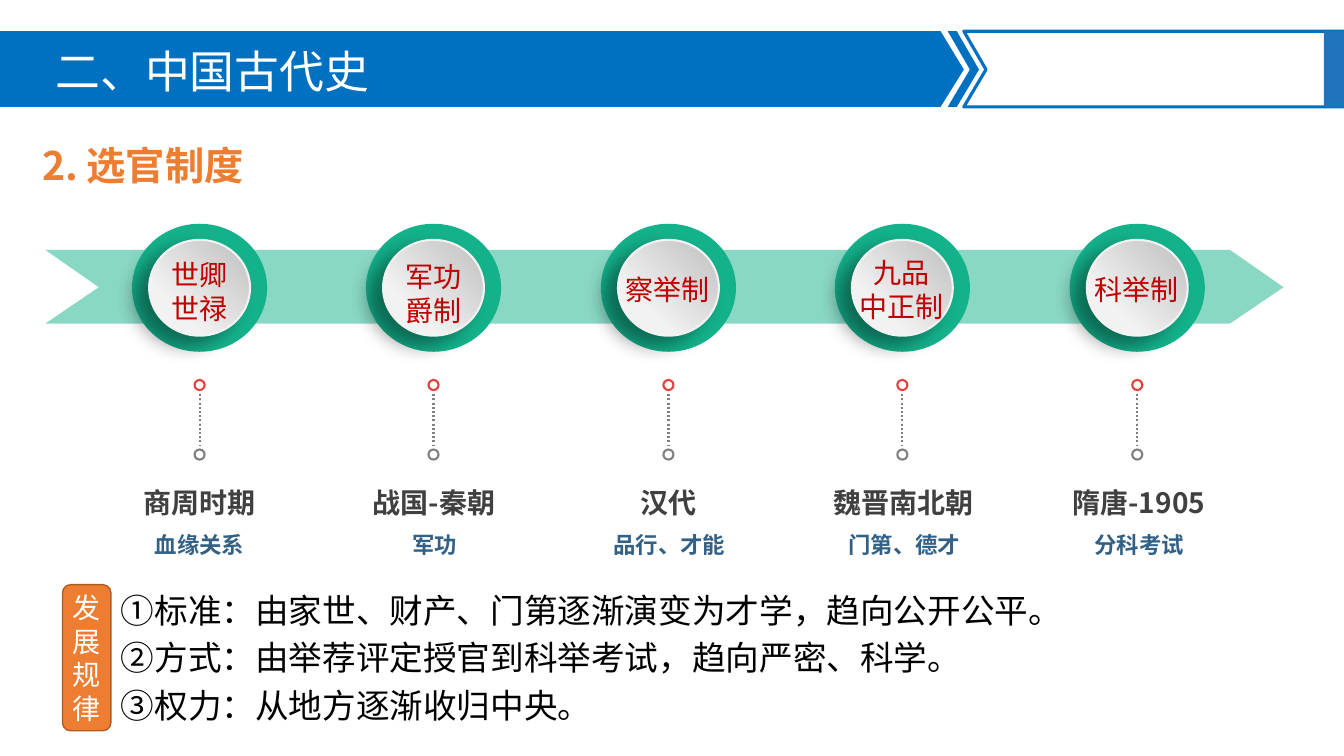
from lxml import etree
from pptx import Presentation
from pptx.dml.color import RGBColor
from pptx.enum.dml import MSO_LINE
from pptx.enum.shapes import MSO_CONNECTOR, MSO_SHAPE
from pptx.enum.text import MSO_ANCHOR, MSO_AUTO_SIZE, PP_ALIGN
from pptx.oxml.ns import qn
from pptx.util import Pt

PX = 9144  # EMU per px, 100 px to the inch

BLUE = RGBColor(0x00, 0x70, 0xC0)
EDGE_BLUE = RGBColor(0x1F, 0x74, 0xBD)
STEEL = RGBColor(0x32, 0x61, 0x85)
GREEN = RGBColor(0x14, 0xB2, 0x8B)
ORANGE = RGBColor(0xED, 0x7D, 0x31)
BROWN = RGBColor(0xAF, 0x5C, 0x24)
RED = RGBColor(0xE3, 0x41, 0x3E)
DARK_RED = RGBColor(0xC0, 0x00, 0x00)
BLACK = RGBColor(0x00, 0x00, 0x00)
CHARCOAL = RGBColor(0x40, 0x40, 0x40)
GRAY = RGBColor(0x80, 0x80, 0x80)
SILVER = RGBColor(0xBF, 0xBF, 0xBF)
PALE = RGBColor(0xF2, 0xF2, 0xF2)
WHITE = RGBColor(0xFF, 0xFF, 0xFF)

SANS = "Noto Sans CJK SC"
SANS_JP = "Noto Sans CJK JP"

LEFT, CENTER, JUSTIFY = PP_ALIGN.LEFT, PP_ALIGN.CENTER, PP_ALIGN.JUSTIFY
TOP, MIDDLE, BOTTOM = MSO_ANCHOR.TOP, MSO_ANCHOR.MIDDLE, MSO_ANCHOR.BOTTOM
OVAL, RECT, ROUNDED = MSO_SHAPE.OVAL, MSO_SHAPE.RECTANGLE, MSO_SHAPE.ROUNDED_RECTANGLE
STRAIGHT = MSO_CONNECTOR.STRAIGHT
DOTTED = MSO_LINE.ROUND_DOT
NO_AUTOFIT = MSO_AUTO_SIZE.NONE

# System, top of its label, period, basis of selection
STAGES = [
    ("世卿\n世禄", 251, "商周时期", "血缘关系"),
    ("军功\n爵制", 253, "战国-秦朝", "军功"),
    ("察举制", 265, "汉代", "品行、才能"),
    ("九品\n中正制", 249, "魏晋南北朝", "门第、德才"),
    ("科举制", 265, "隋唐-1905", "分科考试"),
]
FIRST_CENTER = 198
RING_STEP = 232.5
CAPTION_STEP = 233

TRENDS = [
    "①标准：由家世、财产、门第逐渐演变为才学，趋向公开公平。",
    "②方式：由举荐评定授官到科举考试，趋向严密、科学。",
    "③权力：从地方逐渐收归中央。",
]


def emu(*lengths):
    return [length * PX for length in lengths]


def write(frame, text, size=20, color=BLACK, font=SANS, bold=False,
          align=LEFT, anchor=TOP, spacing=None, inset=10):
    """Fill a text frame with one paragraph per line of text."""
    frame.word_wrap = True
    frame.auto_size = NO_AUTOFIT
    frame.vertical_anchor = anchor
    frame.margin_left = frame.margin_right = inset * PX
    frame.text = text
    for paragraph in frame.paragraphs:
        paragraph.alignment = align
        if spacing:
            paragraph.line_spacing = spacing
        for run in paragraph.runs:
            run.font.size = Pt(size)
            run.font.bold = bold
            run.font.color.rgb = color
            run.font.name = font
            east_asian = etree.SubElement(run.font._element, qn("a:ea"))
            east_asian.set("typeface", font)


class SlideBuilder:
    def __init__(self, width, height):
        self.deck = Presentation()
        self.deck.slide_width, self.deck.slide_height = emu(width, height)
        self.slide = self.deck.slides.add_slide(self.deck.slide_layouts[5])
        self.shapes = self.slide.shapes

    def style(self, shape, fill=None, line=None, weight=1.5):
        shape.shadow.inherit = False
        if fill is None:
            shape.fill.background()
        else:
            shape.fill.solid()
            shape.fill.fore_color.rgb = fill
        if line is None:
            shape.line.fill.background()
        else:
            shape.line.color.rgb = line
            shape.line.width = Pt(weight)
        return shape

    def shape(self, preset, box, **look):
        return self.style(self.shapes.add_shape(preset, *emu(*box)), **look)

    def circle(self, center_x, center_y, width, height, **look):
        box = (round(center_x - width / 2), round(center_y - height / 2), width, height)
        return self.shape(OVAL, box, **look)

    def outline(self, points, **look):
        builder = self.shapes.build_freeform(*points[0], scale=PX)
        builder.add_line_segments(points[1:], close=True)
        return self.style(builder.convert_to_shape(), **look)

    def dotted_line(self, x, top, bottom):
        stem = self.shapes.add_connector(STRAIGHT, *emu(x, top, x, bottom))
        stem.line.color.rgb = GRAY
        stem.line.width = Pt(1.5)
        stem.line.dash_style = DOTTED
        etree.SubElement(stem.element.spPr, qn("a:effectLst"))

    def text(self, box, text, **look):
        write(self.shapes.add_textbox(*emu(*box)).text_frame, text, **look)

    def title(self, box, text, **look):
        heading = self.shapes.title
        heading.left, heading.top, heading.width, heading.height = emu(*box)
        write(heading.text_frame, text, **look)
        self.shapes.element.append(heading.element)  # in front of the banner

    def disc(self, center_x, center_y, width, height):
        """Raised disc with a gradient and a shadow to the lower left."""
        disc = self.circle(center_x, center_y, width, height, line=PALE)
        disc.fill.gradient()
        disc.fill.gradient_angle = 45
        for stop, (position, color) in zip(disc.fill.gradient_stops, [(0.27, PALE), (1, SILVER)]):
            stop.position = position
            stop.color.rgb = color
        effects = disc.element.spPr.find(qn("a:effectLst"))
        shadow = etree.SubElement(effects, qn("a:outerShdw"), blurRad=str(Pt(14)),
                                  dist=str(Pt(12)), dir=str(147 * 60000),
                                  algn="ctr", rotWithShape="0")
        tone = etree.SubElement(shadow, qn("a:srgbClr"), val=str(BLACK))
        etree.SubElement(tone, qn("a:alpha"), val="40000")


def add_timeline(page):
    # Translucent arrow band
    band = page.outline([(45, 248), (1220, 248), (1273, 285), (1220, 321), (45, 321), (98, 285)],
                        fill=GREEN)
    tone = band.element.spPr.find(qn("a:solidFill"))[0]
    etree.SubElement(tone, qn("a:alpha"), val="50000")

    for index, (system, label_top, period, basis) in enumerate(STAGES):
        # Ring, disc and name of the system
        center = int(FIRST_CENTER + index * RING_STEP)
        page.circle(center, 285.5, 134, 127, fill=GREEN)
        page.disc(center, 285.5, 100, 95)
        label_height = 77 if "\n" in system else 44
        page.text((center - 60, label_top, 119, label_height), system,
                  color=DARK_RED, font=SANS_JP, align=CENTER)

        # Dotted stem between two small circles
        page.circle(center, 382, 10, 10, line=RED)
        page.circle(center, 451, 10, 10, line=GRAY)
        page.dotted_line(center, 391, 442)

        # Period and basis of selection
        caption_center = FIRST_CENTER + index * CAPTION_STEP
        page.text((caption_center - 96, 514, 192, 61), basis, size=16, color=STEEL,
                  bold=True, align=CENTER, spacing=1.3)
        page.text((caption_center - 88, 478, 175, 42), period, color=CHARCOAL,
                  bold=True, align=CENTER, anchor=BOTTOM)


def add_trends(page):
    tag = page.shape(ROUNDED, (62, 580, 48, 145), fill=ORANGE, line=BROWN, weight=1)
    write(tag.text_frame, "发\n展\n规\n律", color=WHITE, align=CENTER, anchor=MIDDLE, inset=4)
    for index, trend in enumerate(TRENDS):
        page.text((110, int(580 + index * 47.5), 1052, 50), trend, size=24, align=JUSTIFY)


def add_banner(page):
    top, middle, bottom = 31, 69, 106
    page.outline([(0, top), (933, top), (956, middle), (933, bottom), (0, bottom)], fill=BLUE)
    page.outline([(940, top), (949, top), (971, middle), (949, bottom), (940, bottom),
                  (962, middle)], fill=BLUE)
    page.outline([(956, top), (1336, top), (1336, bottom), (956, bottom), (978, middle)],
                 line=BLUE, weight=2.25)
    page.title((45, 38, 688, 64), "二、中国古代史", size=32, color=WHITE)
    page.shape(RECT, (1313, top, 26, bottom - top), fill=EDGE_BLUE)


def main():
    page = SlideBuilder(1333, 750)
    add_timeline(page)
    add_trends(page)
    page.text((32, 135, 700, 57), "2. 选官制度", size=28, color=ORANGE, bold=True)
    add_banner(page)
    page.deck.save("out.pptx")


if __name__ == "__main__":
    main()
